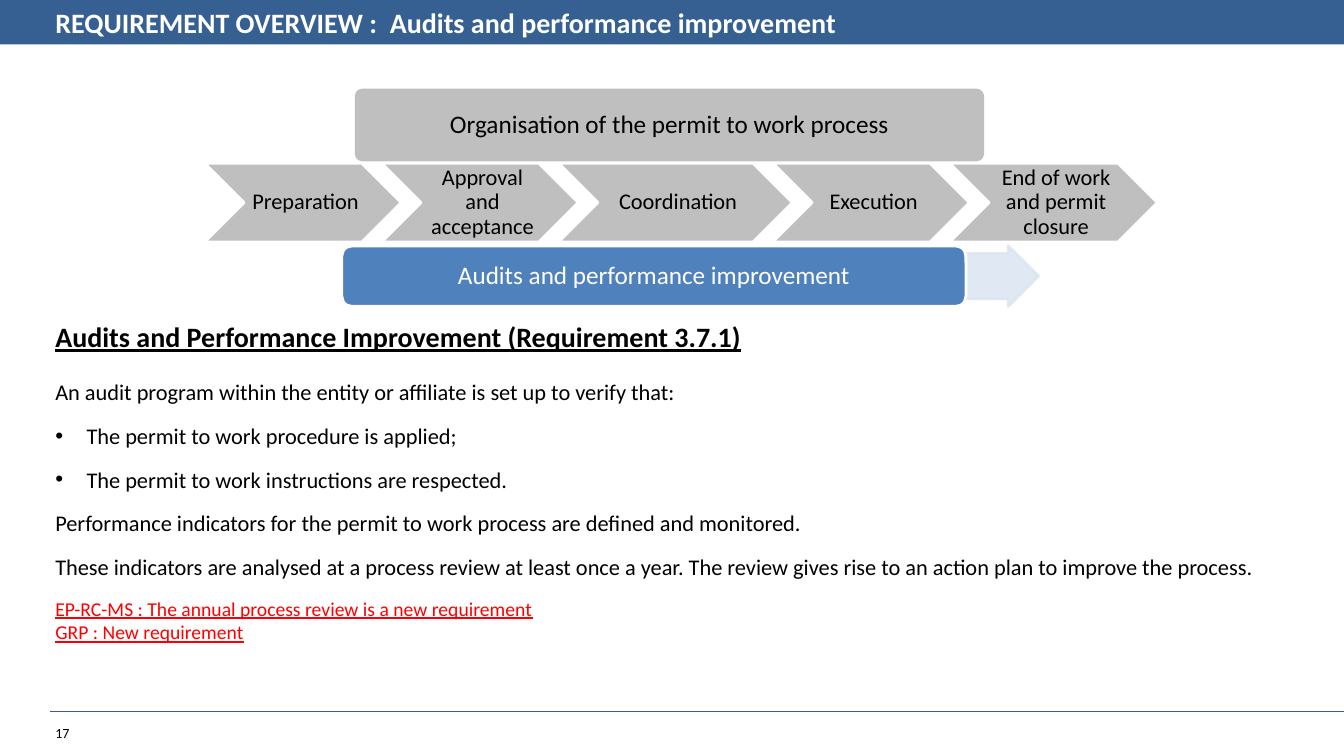
from dataclasses import dataclass

from lxml import etree
from pptx import Presentation
from pptx.dml.color import RGBColor
from pptx.enum import shapes, text
from pptx.oxml import ns
from pptx.util import Inches, Pt

TITLE = "REQUIREMENT OVERVIEW :  Audits and performance improvement"
PAGE_NUMBER = "17"
ORGANISATION = "Organisation of the permit to work process"
AUDITS = "Audits and performance improvement"
STEPS = [
    ("Preparation", 1.95),
    ("Approval and acceptance", 1.95),
    ("Coordination", 2.32),
    ("Execution", 1.95),
    ("End of work and permit closure", 2.06),
]
BODY = [
    ("heading", "Audits and Performance Improvement (Requirement 3.7.1)"),
    ("plain", "An audit program within the entity or affiliate is set up to verify that:"),
    ("bullet", "The permit to work procedure is applied;"),
    ("bullet", "The permit to work instructions are respected."),
    ("plain", "Performance indicators for the permit to work process are defined and monitored."),
    ("plain", "These indicators are analysed at a process review at least once a year. "
              "The review gives rise to an action plan to improve the process."),
    ("notice", "EP-RC-MS : The annual process review is a new requirement\nGRP : New requirement"),
]


@dataclass(frozen=True)
class Theme:
    font: str = "Calibri"
    navy: str = "376092"
    blue: str = "4F81BD"
    pale: str = "DCE6F2"
    grey: str = "BFBFBF"
    white: str = "FFFFFF"
    black: str = "000000"
    red: str = "FF0000"
    heading: int = 20
    banner: int = 18
    normal: int = 16
    notice: int = 14
    small: int = 10


THEME = Theme()
ALIGN = text.PP_ALIGN
SHAPE = shapes.MSO_SHAPE
STYLES = {
    "heading": dict(size=THEME.heading, bold=True, underline=True, after=12),
    "plain": dict(align=ALIGN.JUSTIFY, before=6, after=6),
    "bullet": dict(align=ALIGN.JUSTIFY, before=6, after=6, bullet=True),
    "notice": dict(size=THEME.notice, color=THEME.red, underline=True, before=6, after=6),
}


def write(para, words, size=THEME.normal, color=THEME.black, bold=False, underline=False,
          align=ALIGN.LEFT, before=0, after=0, spacing=1.0, bullet=False):
    para.text = words
    para.alignment = align
    para.space_before, para.space_after = Pt(before), Pt(after)
    para.line_spacing = spacing
    if bullet:
        properties = para._p.get_or_add_pPr()
        properties.set("marL", str(Inches(0.31)))
        properties.set("indent", str(-Inches(0.31)))
        etree.SubElement(properties, ns.qn("a:buFont")).set("typeface", "Arial")
        etree.SubElement(properties, ns.qn("a:buChar")).set("char", "•")
    for span in para.runs:
        font = span.font
        font.name, font.size = THEME.font, Pt(size)
        font.bold, font.underline = bold, underline
        font.color.rgb = RGBColor.from_string(color)


def set_frame(box, margins, anchor=text.MSO_ANCHOR.MIDDLE):
    frame = box.text_frame
    frame.word_wrap = True
    frame.auto_size = text.MSO_AUTO_SIZE.NONE
    frame.vertical_anchor = anchor
    (frame.margin_left, frame.margin_top,
     frame.margin_right, frame.margin_bottom) = map(Inches, margins)
    return frame


def add_block(page, kind, place, fill, line=None):
    block = page.shapes.add_shape(kind, *map(Inches, place))
    block.shadow.inherit = False
    block.fill.solid()
    block.fill.fore_color.rgb = RGBColor.from_string(fill)
    if line:
        block.line.color.rgb = RGBColor.from_string(line)
        block.line.width = Pt(2)
    else:
        block.line.fill.background()
    return block


def label(block, words, margins, **style):
    frame = set_frame(block, margins)
    write(frame.paragraphs[0], words, align=ALIGN.CENTER, spacing=0.9, **style)


def add_text(page, place, lines):
    box = page.shapes.add_textbox(*map(Inches, place))
    frame = set_frame(box, (0.1, 0.05, 0.1, 0.05), text.MSO_ANCHOR.TOP)
    for index, (words, style) in enumerate(lines):
        para = frame.add_paragraph() if index else frame.paragraphs[0]
        write(para, words, **style)


def add_header(page):
    bar = add_block(page, SHAPE.RECTANGLE, (0, 0, 13.33, 0.44), THEME.navy)
    title = page.shapes.title
    bar._element.addnext(title._element)
    title.left, title.top, title.width, title.height = map(Inches, (0.45, 0, 10.47, 0.44))
    frame = set_frame(title, (0.1, 0.05, 0.1, 0.05))
    write(frame.paragraphs[0], TITLE, size=THEME.heading, color=THEME.white, bold=True)


def add_footer(page):
    rule = page.shapes.add_connector(shapes.MSO_CONNECTOR.STRAIGHT,
                                     *map(Inches, (0.5, 7.06, 13.33, 7.06)))
    rule.line.color.rgb = RGBColor.from_string(THEME.navy)
    rule.line.width = Pt(0.75)
    etree.SubElement(rule._element.spPr, ns.qn("a:effectLst"))
    add_text(page, (0.45, 7.14, 0.71, 0.27), [(PAGE_NUMBER, dict(size=THEME.small))])


def add_process(page):
    organisation = add_block(page, SHAPE.ROUNDED_RECTANGLE, (3.52, 0.88, 6.24, 0.72), THEME.grey)
    organisation.adjustments[0] = 0.1
    label(organisation, ORGANISATION, (0.01,) * 4, size=THEME.banner)

    left, height = 2.03, 0.78
    for words, width in STEPS:
        step = add_block(page, SHAPE.CHEVRON, (left, 1.62, width, height), THEME.grey, THEME.white)
        label(step, words, (0.07, 0.02, 0.02, 0.02))
        left += width - height / 4

    arrow = add_block(page, SHAPE.RIGHT_ARROW, (9.42, 2.44, 0.88, 0.6), THEME.pale, THEME.pale)
    arrow.adjustments[0] = 0.75
    for color in arrow._element.spPr.iter(ns.qn("a:srgbClr")):
        etree.SubElement(color, ns.qn("a:alpha")).set("val", "90000")
    audits = add_block(page, SHAPE.ROUNDED_RECTANGLE, (3.39, 2.44, 6.19, 0.6),
                       THEME.blue, THEME.white)
    label(audits, AUDITS, (0.07, 0.04, 0.07, 0.04), size=THEME.banner, color=THEME.white)


def main():
    deck = Presentation()
    deck.slide_width, deck.slide_height = Inches(13.33), Inches(7.5)
    page = deck.slides.add_slide(deck.slide_layouts[5])
    add_footer(page)
    add_header(page)
    add_text(page, (0.45, 3.12, 12.39, 3.78), [(words, STYLES[kind]) for kind, words in BODY])
    add_process(page)
    deck.save("out.pptx")


if __name__ == "__main__":
    main()
